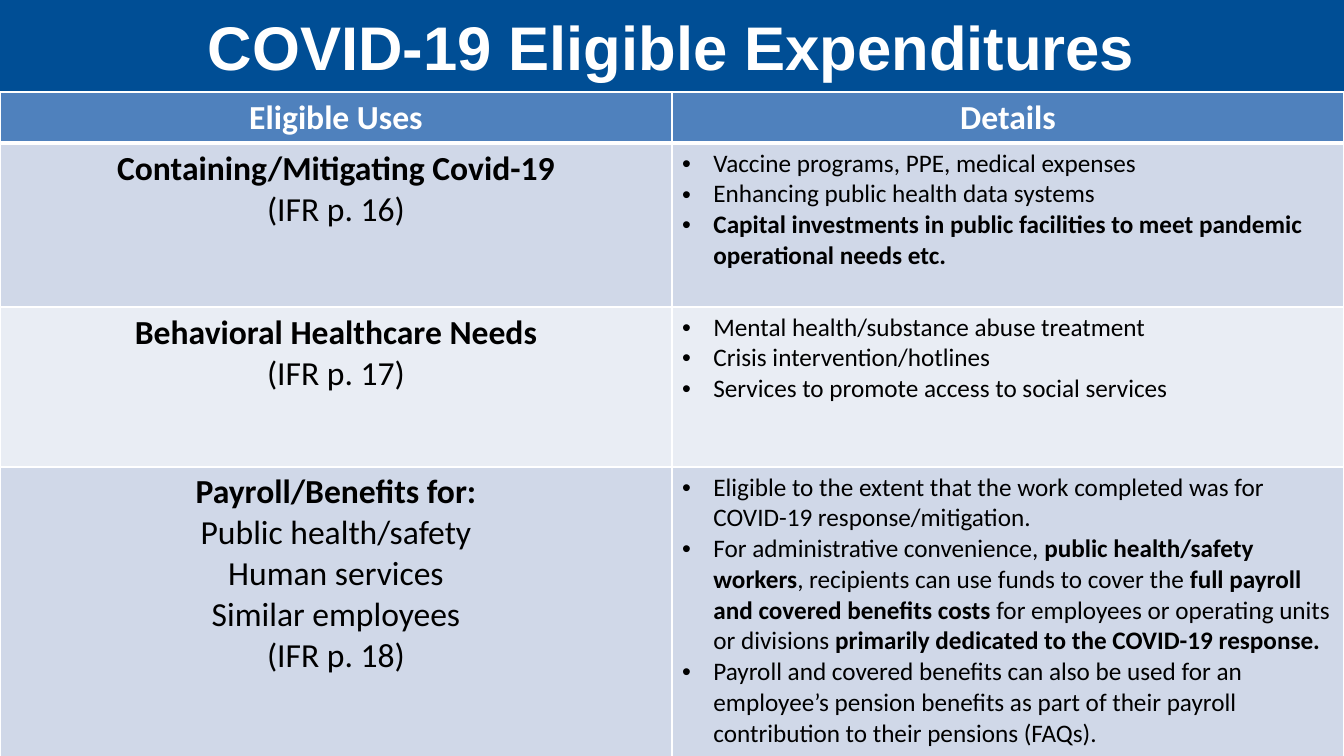
from lxml import etree
from pptx import Presentation
from pptx import util as u
from pptx.dml.color import RGBColor
from pptx.enum import shapes, text
from pptx.oxml import ns

WIDTH, HEIGHT = u.Cm(33.87), u.Cm(19.05)
TITLE_HEIGHT = u.Cm(2.32)
ROW_HEIGHTS = [1.27, 4.13, 4.03, 7.37]
ROW_FILLS = ["4F81BD", "D0D8E8", "E9EDF4", "D0D8E8"]
WHITE, BLACK = "FFFFFF", "000000"

# Asterisks enclose bold passages
HEADINGS = ["*Eligible Uses*", "*Details*"]
USES = [
    (["*Containing/Mitigating Covid-19*", "(IFR p. 16)"],
     ["Vaccine programs, PPE, medical expenses",
      "Enhancing public health data systems",
      "*Capital investments in public facilities to meet pandemic operational needs etc.*"]),
    (["*Behavioral Healthcare Needs*", "(IFR p. 17)"],
     ["Mental health/substance abuse treatment",
      "Crisis intervention/hotlines",
      "Services to promote access to social services"]),
    (["*Payroll/Benefits for:*", "Public health/safety", "Human services",
      "Similar employees", "(IFR p. 18)"],
     ["Eligible to the extent that the work completed was for COVID-19 response/mitigation.",
      "For administrative convenience, *public health/safety workers*, recipients can use "
      "funds to cover the *full payroll and covered benefits costs *for employees or "
      "operating units or divisions *primarily dedicated to the COVID-19 response.*",
      "Payroll and covered benefits can also be used for an employee’s pension benefits "
      "as part of their payroll contribution to their pensions (FAQs)."]),
]


def color(value):
    return RGBColor.from_string(value)


def format_run(run, font, size, value, bold):
    run.font.name = font
    run.font.size = u.Pt(size)
    run.font.color.rgb = color(value)
    run.font.bold = bold


def add_title(slide, title):
    shape = slide.shapes.add_shape(shapes.MSO_SHAPE.RECTANGLE, 0, 0, WIDTH, TITLE_HEIGHT)
    shape.shadow.inherit = False
    shape.fill.solid()
    shape.fill.fore_color.rgb = color("004E95")
    shape.line.fill.background()
    frame = shape.text_frame
    frame.text = title
    frame.vertical_anchor = text.MSO_ANCHOR.MIDDLE
    paragraph = frame.paragraphs[0]
    paragraph.alignment = text.PP_ALIGN.CENTER
    format_run(paragraph.runs[0], "Arial", 44, WHITE, True)


def add_bullet(paragraph):
    properties = paragraph._p.get_or_add_pPr()
    properties.set("marL", str(u.Cm(0.79)))
    properties.set("indent", str(-u.Cm(0.79)))
    etree.SubElement(properties, ns.qn("a:buFont")).set("typeface", "Arial")
    etree.SubElement(properties, ns.qn("a:buChar")).set("char", "•")


def set_borders(cell, bottom_width):
    properties = cell._tc.get_or_add_tcPr()
    widths = {"lnL": 1, "lnR": 1, "lnT": 1, "lnB": bottom_width}
    for index, (side, width) in enumerate(widths.items()):
        line = etree.Element(ns.qn("a:" + side), w=str(u.Pt(width)))
        fill = etree.SubElement(line, ns.qn("a:solidFill"))
        etree.SubElement(fill, ns.qn("a:srgbClr")).set("val", WHITE)
        properties.insert(index, line)


def fill_cell(cell, lines, fill, size=24, value=BLACK, bulleted=False, bottom_width=1):
    cell.fill.solid()
    cell.fill.fore_color.rgb = color(fill)
    set_borders(cell, bottom_width)
    frame = cell.text_frame
    for index, line in enumerate(lines):
        paragraph = frame.add_paragraph() if index else frame.paragraphs[0]
        if bulleted:
            add_bullet(paragraph)
        else:
            paragraph.alignment = text.PP_ALIGN.CENTER
        for part, passage in enumerate(line.split("*")):
            if passage:
                run = paragraph.add_run()
                run.text = passage
                format_run(run, "Calibri", size, value, part % 2 == 1)


def add_uses_table(slide):
    frame = slide.shapes.add_table(len(ROW_HEIGHTS), 2, 0, TITLE_HEIGHT,
                                   WIDTH, u.Cm(sum(ROW_HEIGHTS)))
    table = frame.table
    table.horz_banding = False
    for row, height in zip(table.rows, ROW_HEIGHTS):
        row.height = u.Cm(height)

    # Header row
    for column, heading in enumerate(HEADINGS):
        fill_cell(table.cell(0, column), [heading], ROW_FILLS[0], value=WHITE, bottom_width=3)

    # Uses and their details
    for row, (use, details) in enumerate(USES, start=1):
        fill_cell(table.cell(row, 0), use, ROW_FILLS[row])
        fill_cell(table.cell(row, 1), details, ROW_FILLS[row], size=18, bulleted=True)


def main():
    presentation = Presentation()
    presentation.slide_width, presentation.slide_height = WIDTH, HEIGHT
    slide = presentation.slides.add_slide(presentation.slide_layouts[6])
    add_title(slide, "COVID-19 Eligible Expenditures")
    add_uses_table(slide)
    presentation.save("out.pptx")


if __name__ == "__main__":
    main()
